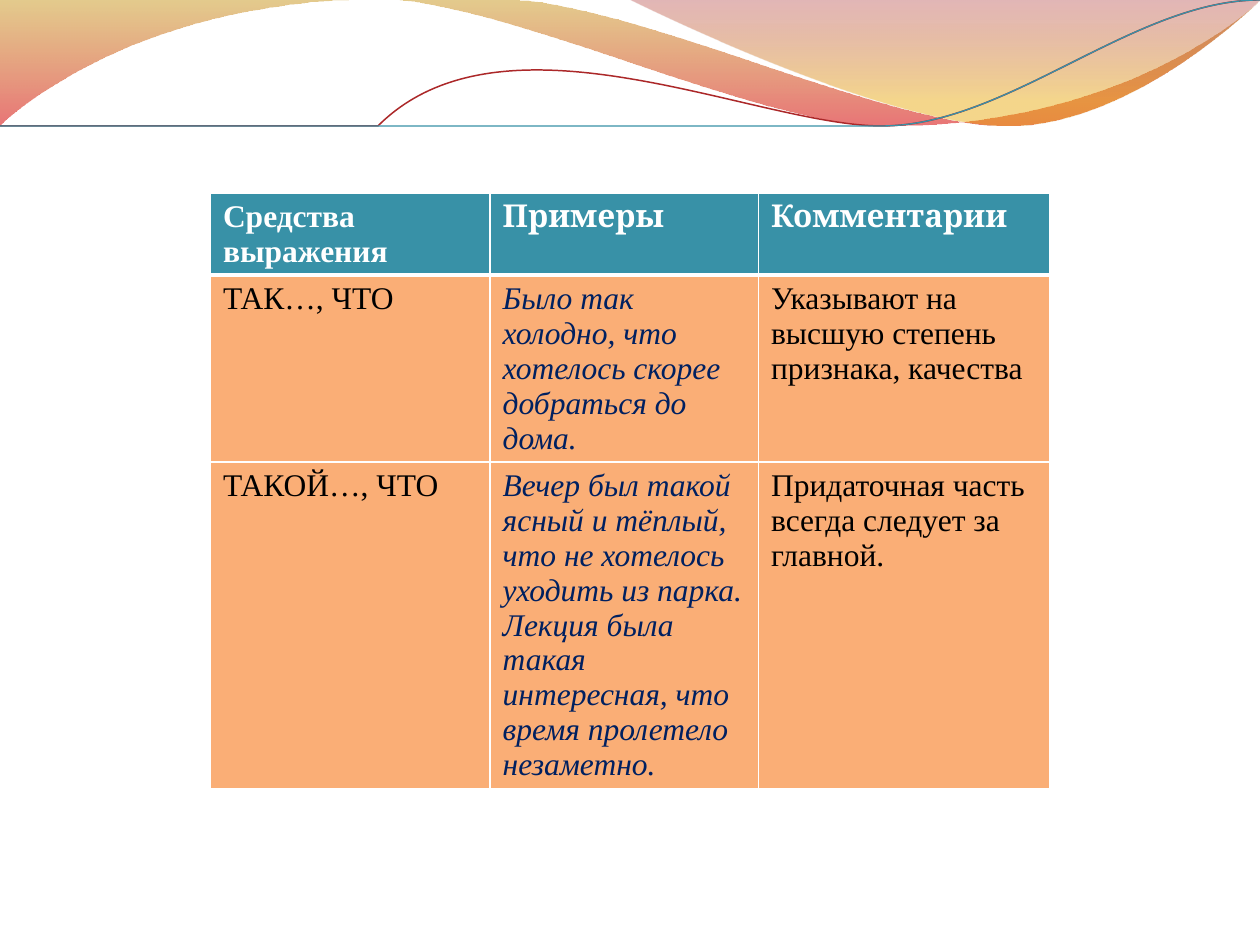
from lxml import etree
from pptx import Presentation, util as u
from pptx.dml.color import RGBColor
from pptx.oxml.ns import qn

WIDTH, HEIGHT = 10, 7.5
WHITE = "FFFFFF"

# Outlines in inches: a pair is a straight segment, six numbers are a cubic curve.
BANDS = [
    {"start": (0, 0),
     "segments": [(4.4, -0.01), (4.76, 0.17, 6.64, 0.63, 7.58, 0.63),
                  (8.53, 0.63, 9.58, 0.26, 10, 0.09), (10.01, 0.36),
                  (9.83, 0.44, 8.7, 0.76, 7.46, 0.75),
                  (6.22, 0.75, 3.82, 0.28, 2.57, 0.34),
                  (1.29, 0.36, 0.46, 0.83, -0.01, 1.13)],
     "stops": [(0, "C38B00", 45), (1, "D60305", 55)]},
    {"start": (4.79, -0.01),
     "segments": [(5.09, 0.11, 6.82, 0.62, 7.69, 0.65),
                  (8.56, 0.69, 9.61, 0.32, 10, 0.21), (10, 0)],
     "stops": [(0, "A11112", 30), (0.8, "E9A600", 45)]},
]
WAVES = [
    {"start": (0, 1.11),
     "segments": [(0.48, 0.93, 1.58, 0.57, 2.77, 0.52),
                  (3.95, 0.47, 5.93, 0.89, 7.13, 0.8),
                  (8.33, 0.71, 9.38, 0.15, 9.98, -0.02)],
     "color": "AC2829", "width": 0.85},
    {"start": (0, 1.04),
     "segments": [(0.47, 0.96, 1.64, 0.61, 2.83, 0.56),
                  (4.03, 0.51, 5.97, 0.84, 7.17, 0.75),
                  (8.36, 0.67, 9.41, 0.21, 10, 0.06)],
     "color": "3891A7", "width": 0.75},
]

ROWS = [
    ["Средства выражения", "Примеры", "Комментарии"],
    ["ТАК…, ЧТО",
     "Было так холодно, что хотелось скорее добраться до дома.",
     "Указывают на высшую степень признака, качества"],
    ["ТАКОЙ…, ЧТО",
     "Вечер был такой ясный и тёплый, что не хотелось уходить из парка.\n"
     "Лекция была такая интересная, что время пролетело незаметно.",
     "Придаточная часть всегда следует за главной."],
]
TABLE_LEFT, TABLE_TOP = 1.67, 1.53
COLUMN_WIDTHS = [2.22, 2.13, 2.31]
ROW_HEIGHTS = [0.65, 1.48, 2.59]
HEADER_FILL, BODY_FILL = "3891A7", "FAAE76"

HEADER = {"name": "Cambria", "bold": True, "italic": False, "color": WHITE}
BODY = {"name": "Times New Roman", "bold": False, "italic": False, "color": "000000"}
EXAMPLE = BODY | {"italic": True, "color": "002060"}
FIRST_HEADER = HEADER | {"name": "Times New Roman"}
FORMATS = [[FIRST_HEADER, HEADER, HEADER]] + [[BODY, EXAMPLE, BODY]] * 2


def rgb(color):
    return RGBColor.from_string(color)


def add_curve(slide, start, segments, close):
    """Build a freeform through all points, then turn each triple into a Bézier."""
    points = [pair for s in segments for pair in zip(s[::2], s[1::2])]
    builder = slide.shapes.build_freeform(*start, scale=u.Inches(1))
    builder.add_line_segments(points, close=close)
    shape = builder.convert_to_shape()
    shape.shadow.inherit = False
    lines = iter(list(shape._element.iter(qn("a:lnTo"))))
    for segment in segments:
        line = next(lines)
        if len(segment) == 6:
            line.tag = qn("a:cubicBezTo")
            for _ in range(2):
                extra = next(lines)
                line.append(extra[0])
                extra.getparent().remove(extra)
    return shape


def add_band(slide, start, segments, stops):
    shape = add_curve(slide, start, segments, close=True)
    shape.line.fill.background()
    shape.fill.gradient()
    shape.fill.gradient_angle = 270
    for stop, (position, color, _) in zip(shape.fill.gradient_stops, stops):
        stop.position = position
        stop.color.rgb = rgb(color)
    gradient = shape._element.spPr.find(qn("a:gradFill"))
    for element, (_, _, opacity) in zip(gradient.iter(qn("a:srgbClr")), stops):
        for child in list(element):
            element.remove(child)
        etree.SubElement(element, qn("a:alpha"), val=str(opacity * 1000))


def add_wave(slide, start, segments, color, width):
    shape = add_curve(slide, start, segments, close=False)
    shape.fill.background()
    shape.line.color.rgb = rgb(color)
    shape.line.width = u.Pt(width)


def set_borders(cell, widths):
    properties = cell._tc.get_or_add_tcPr()
    for side, width in widths.items():
        line = etree.SubElement(properties, qn(f"a:ln{side}"), w=str(u.Pt(width)))
        fill = etree.SubElement(line, qn("a:solidFill"))
        etree.SubElement(fill, qn("a:srgbClr"), val=WHITE)


def fill_cell(cell, content, format_values):
    cell.text = content
    for paragraph in cell.text_frame.paragraphs:
        for run in paragraph.runs:
            run.font.size = u.Pt(18)
            for name, value in format_values.items():
                if name == "color":
                    run.font.color.rgb = rgb(value)
                else:
                    setattr(run.font, name, value)


def add_means_table(slide):
    frame = slide.shapes.add_table(
        len(ROWS), len(COLUMN_WIDTHS), u.Inches(TABLE_LEFT), u.Inches(TABLE_TOP),
        u.Inches(sum(COLUMN_WIDTHS)), u.Inches(sum(ROW_HEIGHTS)))
    table = frame.table
    for column, width in zip(table.columns, COLUMN_WIDTHS):
        column.width = u.Inches(width)
    for row, height in zip(table.rows, ROW_HEIGHTS):
        row.height = u.Inches(height)
    for r, row in enumerate(ROWS):
        for c, content in enumerate(row):
            cell = table.cell(r, c)
            set_borders(cell, {"L": 1, "R": 1, "T": 3 if r == 1 else 1,
                               "B": 3 if r == 0 else 1})
            cell.fill.solid()
            cell.fill.fore_color.rgb = rgb(BODY_FILL if r else HEADER_FILL)
            fill_cell(cell, content, FORMATS[r][c])


def main():
    presentation = Presentation()
    presentation.slide_width = u.Inches(WIDTH)
    presentation.slide_height = u.Inches(HEIGHT)
    slide = presentation.slides.add_slide(presentation.slide_layouts[6])
    for band in BANDS:
        add_band(slide, **band)
    for wave in WAVES:
        add_wave(slide, **wave)
    add_means_table(slide)
    presentation.save("out.pptx")


if __name__ == "__main__":
    main()
